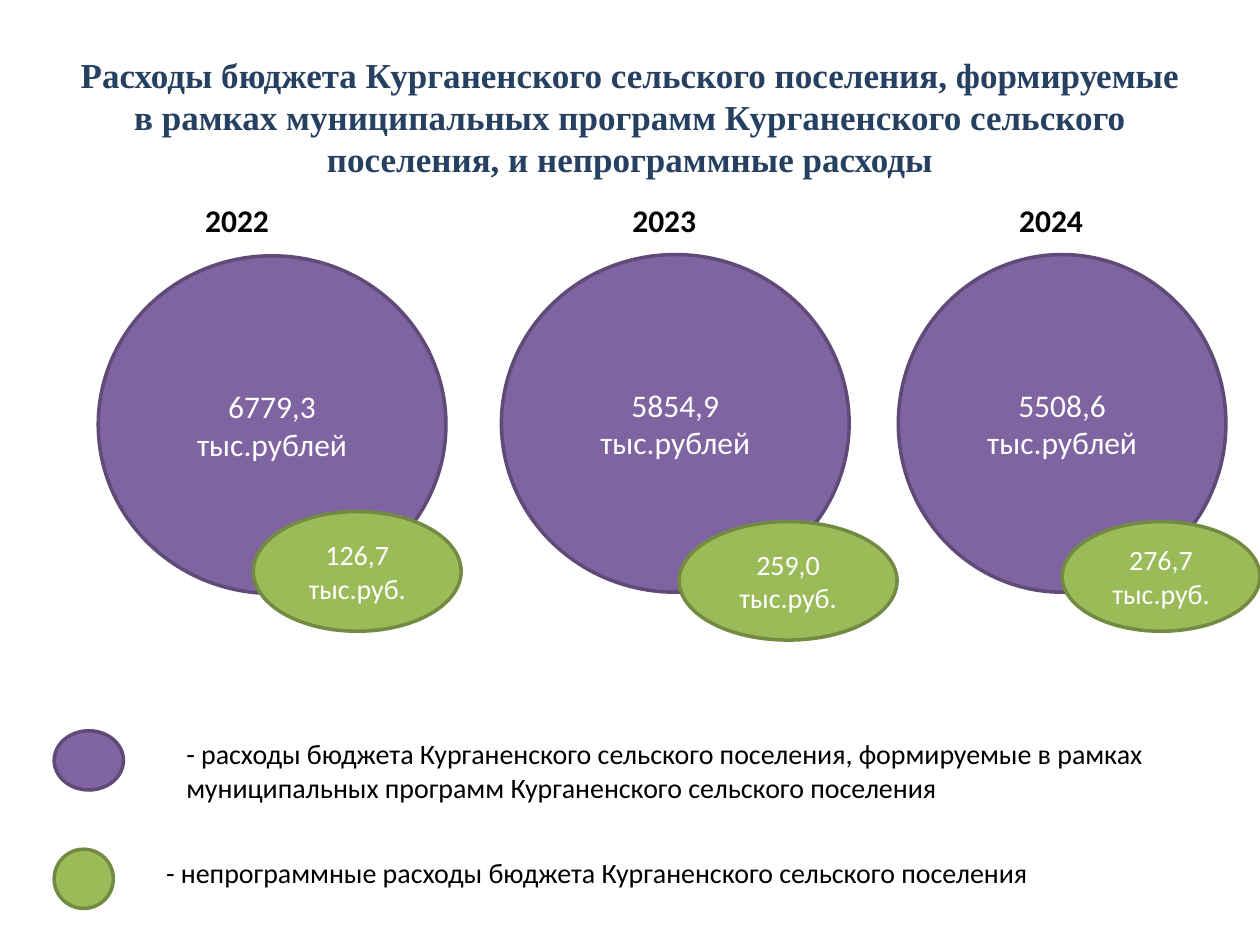
from dataclasses import dataclass

from pptx import Presentation
from pptx.dml.color import RGBColor
from pptx.enum import shapes, text
from pptx.util import Inches, Pt

HUES = {"title": "254061", "black": "000000", "white": "FFFFFF",
        "plan": "8064A2", "plan_edge": "5F4A78",
        "other": "9BBB59", "other_edge": "738A42"}


@dataclass
class Box:
    left: float
    top: float
    width: float
    height: float

    def place(self) -> list:
        return [Inches(n) for n in (self.left, self.top, self.width, self.height)]


@dataclass
class Oval:
    box: Box
    hue: str
    lines: tuple = ()
    size: int = 18


@dataclass
class Label:
    box: Box
    words: str
    size: int = 16
    bold: bool = False


def add_run(para, words: str, size: int, hue: str, bold: bool = False,
            font: str = "Calibri") -> None:
    run = para.add_run()
    run.text = words
    run.font.name, run.font.size, run.font.bold = font, Pt(size), bold
    run.font.color.rgb = RGBColor.from_string(HUES[hue])


def draw_oval(slide, oval: Oval) -> None:
    shape = slide.shapes.add_shape(shapes.MSO_SHAPE.OVAL, *oval.box.place())
    shape.shadow.inherit = False
    shape.fill.solid()
    shape.fill.fore_color.rgb = RGBColor.from_string(HUES[oval.hue])
    shape.line.color.rgb = RGBColor.from_string(HUES[oval.hue + "_edge"])
    shape.line.width = Pt(2)
    frame = shape.text_frame
    frame.word_wrap = True
    frame.vertical_anchor = text.MSO_ANCHOR.MIDDLE
    for i, line in enumerate(oval.lines):
        para = frame.add_paragraph() if i else frame.paragraphs[0]
        para.alignment = text.PP_ALIGN.CENTER
        add_run(para, line, oval.size, "white")


def draw_label(slide, label: Label) -> None:
    frame = slide.shapes.add_textbox(*label.box.place()).text_frame
    frame.word_wrap = True
    add_run(frame.paragraphs[0], label.words, label.size, "black", label.bold)


def draw_title(slide, words: str) -> None:
    title = slide.shapes.title
    title.left, title.top, title.width, title.height = Box(0.5, 0.3, 9, 1.25).place()
    frame = title.text_frame
    frame.word_wrap = True
    frame.vertical_anchor = text.MSO_ANCHOR.MIDDLE
    para = frame.paragraphs[0]
    para.alignment = text.PP_ALIGN.CENTER
    add_run(para, words, 20, "title", True, "Times New Roman")


UNIT = "тыс.рублей"
OVALS = [
    # Programme spending by year
    Oval(Box(0.78, 2.03, 2.76, 2.68), "plan", ("6779,3", UNIT)),
    Oval(Box(3.98, 2.02, 2.76, 2.68), "plan", ("5854,9", UNIT)),
    Oval(Box(7.13, 2.02, 2.6, 2.68), "plan", ("5508,6", UNIT)),
    # Other spending by year
    Oval(Box(2.01, 4.06, 1.65, 0.95), "other", ("126,7 тыс.руб.",), 16),
    Oval(Box(5.39, 4.14, 1.73, 0.94), "other", ("259,0", "тыс.руб."), 16),
    Oval(Box(8.43, 4.14, 1.57, 0.87), "other", ("276,7 тыс.руб.",), 16),
    # Legend keys
    Oval(Box(0.43, 5.8, 0.55, 0.47), "plan"),
    Oval(Box(0.43, 6.74, 0.47, 0.47), "other"),
]
YEARS = {"2022": 1.53, "2023": 4.92, "2024": 7.99}
LABELS = [Label(Box(left, 1.55, 0.79, 0.4), year, 18, True)
          for year, left in YEARS.items()]
LABELS += [
    Label(Box(1.38, 5.8, 7.95, 0.64),
          "- расходы бюджета Курганенского сельского поселения, формируемые "
          "в рамках муниципальных программ Курганенского сельского поселения"),
    Label(Box(1.22, 6.74, 7.95, 0.37),
          "- непрограммные расходы бюджета Курганенского сельского поселения"),
]


def main() -> None:
    deck = Presentation()
    deck.slide_width, deck.slide_height = Inches(10), Inches(7.5)
    slide = deck.slides.add_slide(deck.slide_layouts.get_by_name("Title Only"))
    draw_title(slide, "Расходы бюджета Курганенского сельского поселения, "
                      "формируемые в рамках муниципальных программ Курганенского "
                      "сельского поселения, и непрограммные расходы")
    for oval in OVALS:
        draw_oval(slide, oval)
    for label in LABELS:
        draw_label(slide, label)
    deck.save("out.pptx")


if __name__ == "__main__":
    main()
